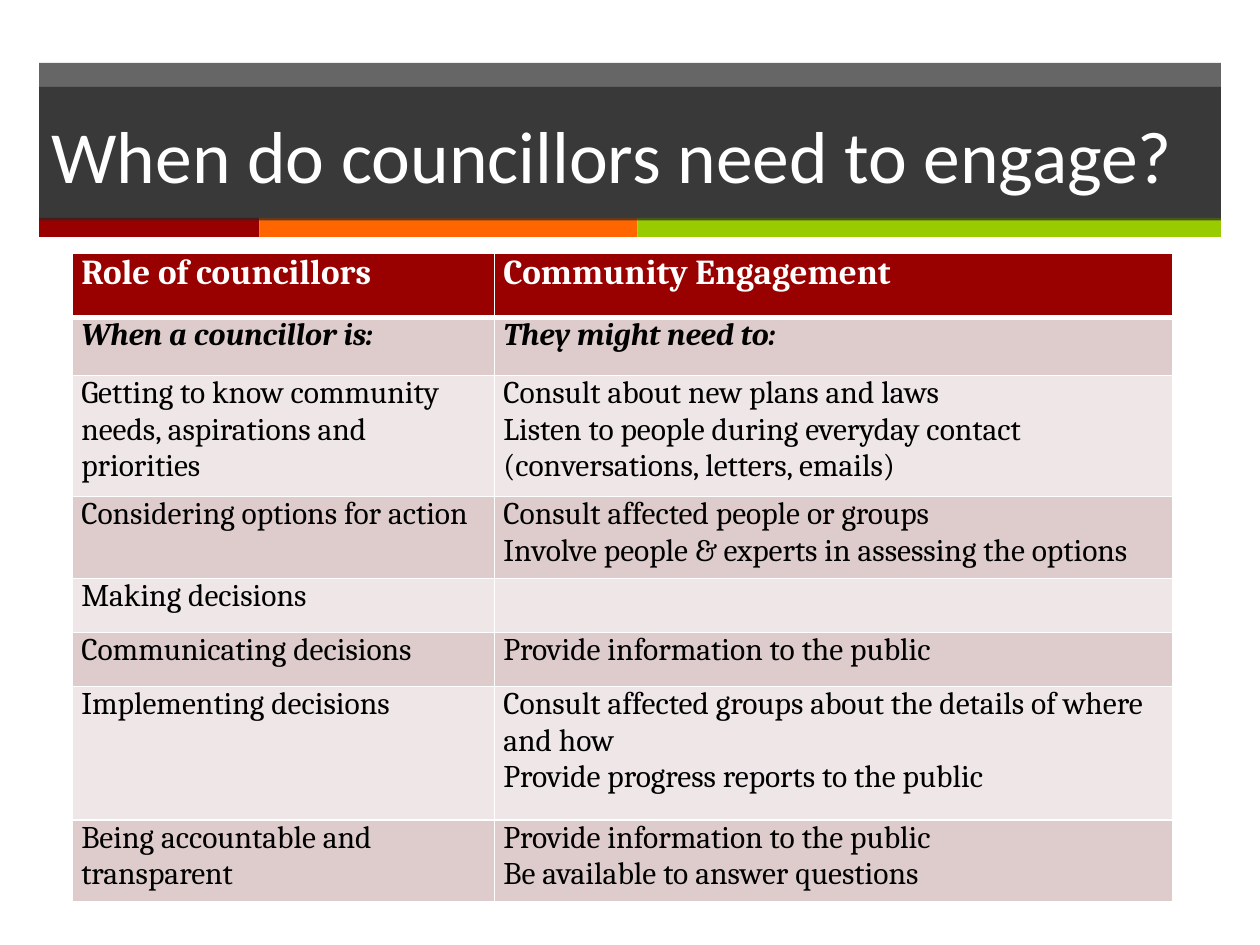
from dataclasses import dataclass
from pptx import Presentation
from pptx.dml.color import RGBColor as RGB
from pptx.enum.shapes import MSO_SHAPE as Shape
from pptx.enum.text import MSO_ANCHOR as Anchor, MSO_AUTO_SIZE as Fit, PP_ALIGN as Align
from pptx.oxml.ns import qn
from pptx.util import Inches, Pt
from lxml.etree import SubElement

COLS, ROWS = 100, 75
WIDTH, HEIGHT = Inches(10), Inches(7.5)


@dataclass(frozen=True)
class Theme:
    """Colours, fonts and type sizes of the slide."""
    dark: str = "262626"
    white: str = "FFFFFF"
    black: str = "000000"
    red: str = "990000"
    orange: str = "FF6600"
    green: str = "99CC00"
    bands: tuple = ("DECCCC", "EFE7E7")
    title_font: str = "Calibri"
    body_font: str = "Cambria"
    title_size: int = 42
    head_size: int = 20
    body_size: int = 18
    dark_alpha: int = 70
    rule: int = 1
    head_rule: int = 3


T = Theme()

TITLE = "When do councillors need to engage?"
ROLES = [
    (5.1, "Role of councillors", "Community Engagement"),
    (4.6, "When a councillor is:", "They might need to:"),
    (9.6, "Getting to know community needs, aspirations and priorities",
     "Consult about new plans and laws\n"
     "Listen to people during everyday contact (conversations, letters, emails)"),
    (6.5, "Considering options for action",
     "Consult affected people or groups\nInvolve people & experts in assessing the options"),
    (4.3, "Making decisions", ""),
    (4.3, "Communicating decisions", "Provide information to the public"),
    (10.6, "Implementing decisions",
     "Consult affected groups about the details of where and how\n"
     "Provide progress reports to the public"),
    (6.5, "Being accountable and transparent",
     "Provide information to the public\nBe available to answer questions"),
]


def x(cols):
    """Width of a number of grid columns."""
    return int(WIDTH * cols / COLS)


def y(rows):
    """Height of a number of grid rows."""
    return int(HEIGHT * rows / ROWS)


def assign(obj, **values):
    """Set each named attribute of an object."""
    for name, value in values.items():
        setattr(obj, name, value)


def paint(sp, color, alpha=None):
    """Fill anything fillable with a solid colour, optionally translucent."""
    sp.fill.solid()
    sp.fill.fore_color.rgb = RGB.from_string(color)
    if alpha:
        clr = sp.fill._xPr.find(qn("a:solidFill"))[0]
        SubElement(clr, qn("a:alpha"), val=str(alpha * 1000))


def style(p, color, **font):
    """Format the font of a paragraph's runs."""
    for r in p.runs:
        assign(r.font, **font)
        r.font.color.rgb = RGB.from_string(color)


def add_bar(slide, left, top, width, height, color, alpha=None):
    """Add a plain rectangle in grid units."""
    sp = slide.shapes.add_shape(Shape.RECTANGLE, x(left), y(top), x(width), y(height))
    sp.shadow.inherit = False
    sp.line.fill.background()
    paint(sp, color, alpha)


def add_banner(slide, left, top, width, height):
    """Add the dark banner, its three-colour stripe and the title."""
    stripe, lip = 1.5, 1.9
    add_bar(slide, left, top, width, height - stripe, T.dark, T.dark_alpha)
    start = left
    for share, color in ((17.5, T.red), (30, T.orange), (46.3, T.green)):
        add_bar(slide, start, top + height - stripe, share, stripe, color)
        start += share

    title = slide.shapes.title
    title.element.getparent().append(title.element)
    assign(title, left=x(left), top=y(top + lip), width=x(width), height=y(10.6))
    paint(title, T.dark, T.dark_alpha)
    tf = title.text_frame
    tf.text = TITLE
    assign(tf, word_wrap=True, auto_size=Fit.NONE, vertical_anchor=Anchor.MIDDLE)
    p = tf.paragraphs[0]
    p.alignment = Align.LEFT
    style(p, T.white, name=T.title_font, size=Pt(T.title_size))


def add_borders(cell, **widths):
    """Draw white borders of the given widths on a cell."""
    tc_pr = cell._tc.get_or_add_tcPr()
    for side in "LRTB":
        ln = SubElement(tc_pr, qn(f"a:ln{side}"), w=str(Pt(widths.get(side, T.rule))))
        fill = SubElement(ln, qn("a:solidFill"))
        SubElement(fill, qn("a:srgbClr"), val=T.white)


def fill_cell(cell, text, row):
    """Write and format one cell according to its row."""
    head = row == 0
    assign(cell, text=text, margin_left=x(0.7), margin_right=x(0.7),
           margin_top=0, margin_bottom=0)
    add_borders(cell, **{0: {"B": T.head_rule}, 1: {"T": T.head_rule}}.get(row, {}))
    paint(cell, T.red if head else T.bands[(row - 1) % 2])
    for p in cell.text_frame.paragraphs:
        style(p, T.white if head else T.black, name=T.body_font,
              size=Pt(T.head_size if head else T.body_size),
              bold=row < 2, italic=row == 1)


def add_roles(slide, left, top, width):
    """Add the table of roles and engagement tasks."""
    height = sum(row[0] for row in ROLES)
    table = slide.shapes.add_table(len(ROLES), 2, x(left), y(top), x(width), y(height)).table
    first = 33.5
    for col, share in zip(table.columns, (first, width - first)):
        col.width = x(share)
    for i, (rows, *texts) in enumerate(ROLES):
        table.rows[i].height = y(rows)
        for cell, text in zip(table.rows[i].cells, texts):
            fill_cell(cell, text, i)


def main():
    """Build and save the slide."""
    prs = Presentation()
    assign(prs, slide_width=WIDTH, slide_height=HEIGHT)
    slide = prs.slides.add_slide(prs.slide_layouts[5])
    add_banner(slide, 3.1, 5, 93.8, 13.8)
    add_roles(slide, 5.75, 20.1, 87.3)
    prs.save("out.pptx")


if __name__ == "__main__":
    main()
